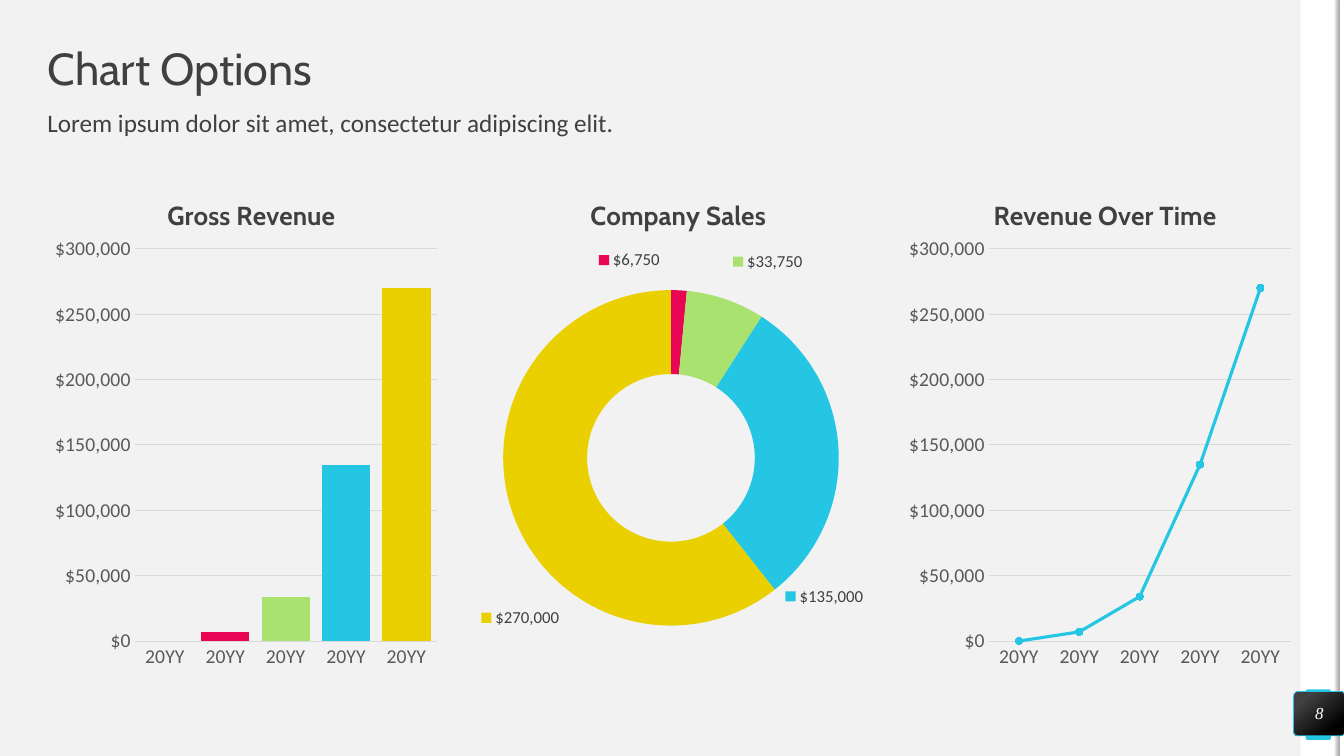
"""Build a slide that shows a column, a doughnut and a line chart side by side."""
import dataclasses
import typing

import lxml.etree
import pptx
import pptx.chart.chart
import pptx.chart.data
import pptx.dml.color
import pptx.enum.chart
import pptx.enum.shapes
import pptx.enum.text
import pptx.oxml.ns
import pptx.slide
import pptx.text.text
import pptx.util

RGB = pptx.dml.color.RGBColor
KIND = pptx.enum.chart.XL_CHART_TYPE
SHAPE = pptx.enum.shapes.MSO_SHAPE
ALIGN = pptx.enum.text.PP_ALIGN
ANCHOR = pptx.enum.text.MSO_ANCHOR

PAPER = RGB(0xF2, 0xF2, 0xF2)
WHITE = RGB(0xFF, 0xFF, 0xFF)
BLACK = RGB(0x00, 0x00, 0x00)
SHADE = RGB(0xA6, 0xA6, 0xA6)
INK = RGB(0x40, 0x40, 0x40)
AXIS_INK = RGB(0x59, 0x59, 0x59)
RULE = RGB(0xD9, 0xD9, 0xD9)
BLUE = RGB(0x25, 0xC6, 0xE3)
GREEN = RGB(0xA9, 0xE2, 0x6F)
RED = RGB(0xE8, 0x05, 0x54)
YELLOW = RGB(0xEA, 0xD0, 0x00)
POINT_COLOURS = (GREEN, RED, GREEN, BLUE, YELLOW)

COLUMNS, ROWS = 1333, 750
CELL = pptx.util.Inches(0.01)
LEFT_MARGIN, CHART_PITCH = 47, 423.5
DOLLARS = "[$$-409]#,##0"
YEARS = ("20YY",) * 5
YEARLY = (0, 7000, 34000, 135000, 270000)
AXIS_PLOT = (0.22, 0.16, 0.76, 0.76)
LABEL_SHIFTS = {1: (-0.12, -0.14), 2: (0.14, -0.15), 3: (0.07, 0.28), 4: (-0.08, 0.23)}


@dataclasses.dataclass(frozen=True)
class Box:
    """A rectangle in grid columns and rows."""
    left: float
    top: float
    width: float
    height: float

    def lengths(self) -> tuple[int, ...]:
        """Return the rectangle as slide lengths."""
        return tuple(round(cells * CELL) for cells in dataclasses.astuple(self))


@dataclasses.dataclass(frozen=True)
class Gradient:
    """Two stops, each a position and a colour, and a direction."""
    stops: tuple[tuple[float, RGB], ...]
    angle: float


@dataclasses.dataclass(frozen=True)
class Ornament:
    """A decorative shape on the right edge."""
    box: Box
    fill: RGB | Gradient
    rotation: float = 0
    corner: float | None = None
    outline: RGB | None = None


@dataclasses.dataclass(frozen=True)
class Panel:
    """One chart with its title and plot area as shares of the chart."""
    title: str
    title_left: float
    kind: KIND
    categories: tuple[str, ...]
    values: tuple[int, ...]
    plot_area: tuple[float, ...]
    finish: typing.Callable[[pptx.chart.chart.Chart], None]


def style_font(font: pptx.text.text.Font, name: str, size: float, colour: RGB) -> None:
    """Set the typeface, size and colour of a font."""
    font.name, font.size = name, pptx.util.Pt(size)
    font.color.rgb = colour


def write(frame: pptx.text.text.TextFrame, text: str, name: str, size: float,
          colour: RGB = INK, align: ALIGN = ALIGN.LEFT, anchor: ANCHOR = ANCHOR.MIDDLE) -> None:
    """Fill a frame without margins with one styled paragraph."""
    frame.text = text
    frame.word_wrap = True
    frame.auto_size = pptx.enum.text.MSO_AUTO_SIZE.NONE
    frame.vertical_anchor = anchor
    frame.margin_left = frame.margin_right = frame.margin_top = frame.margin_bottom = 0
    para = frame.paragraphs[0]
    para.alignment, para.line_spacing = align, 0.9
    style_font(para.runs[0].font, name, size, colour)


def draw_ornament(page: pptx.slide.Slide, ornament: Ornament):
    """Draw one decorative shape and return it."""
    kind = SHAPE.RECTANGLE if ornament.corner is None else SHAPE.ROUNDED_RECTANGLE
    shape = page.shapes.add_shape(kind, *ornament.box.lengths())
    shape.shadow.inherit = False
    shape.rotation = ornament.rotation
    if ornament.corner is not None:
        shape.adjustments[0] = ornament.corner
    if isinstance(ornament.fill, Gradient):
        shape.fill.gradient()
        shape.fill.gradient_angle = ornament.fill.angle
        for stop, (position, colour) in zip(shape.fill.gradient_stops, ornament.fill.stops):
            stop.position, stop.color.rgb = position, colour
    else:
        shape.fill.solid()
        shape.fill.fore_color.rgb = ornament.fill
    if ornament.outline is None:
        shape.line.fill.background()
    else:
        shape.line.color.rgb = ornament.outline
        shape.line.width = pptx.util.Pt(0.5)
    return shape


def set_layout(parent, index: int, shares: tuple[float, ...], modes: tuple[str, ...] = ()) -> None:
    """Give a chart part a manual layout with x, y and optionally w, h."""
    tag = pptx.oxml.ns.qn
    for old in parent.findall(tag("c:layout")):
        parent.remove(old)
    layout = lxml.etree.Element(tag("c:layout"))
    manual = lxml.etree.SubElement(layout, tag("c:manualLayout"))
    if len(shares) == 4:
        lxml.etree.SubElement(manual, tag("c:layoutTarget")).set("val", "inner")
    for mode in modes:
        lxml.etree.SubElement(manual, tag(f"c:{mode}")).set("val", "edge")
    for name, share in zip("xywh", shares):
        lxml.etree.SubElement(manual, tag(f"c:{name}")).set("val", str(share))
    parent.insert(index, layout)


def colour_points(series, indexes: typing.Iterable[int]) -> None:
    """Fill the chosen points with their colours."""
    for index in indexes:
        fill = series.points[index].format.fill
        fill.solid()
        fill.fore_color.rgb = POINT_COLOURS[index]


def finish_axes(chart: pptx.chart.chart.Chart) -> None:
    """Format the year and dollar axes."""
    for axis in (chart.category_axis, chart.value_axis):
        axis.major_tick_mark = axis.minor_tick_mark = pptx.enum.chart.XL_TICK_MARK.NONE
        style_font(axis.tick_labels.font, "Calibri", 14, AXIS_INK)
    dollars = chart.value_axis
    dollars.minimum_scale, dollars.maximum_scale, dollars.major_unit = 0, 300000, 50000
    dollars.tick_labels.number_format = DOLLARS
    dollars.tick_labels.number_format_is_linked = False
    dollars.format.line.fill.background()
    for line in (chart.category_axis.format.line, dollars.major_gridlines.format.line):
        line.color.rgb, line.width = RULE, pptx.util.Pt(0.75)


def finish_columns(chart: pptx.chart.chart.Chart) -> None:
    """Format the column chart."""
    finish_axes(chart)
    chart.plots[0].gap_width = 25
    series = chart.plots[0].series[0]
    series.format.fill.solid()
    series.format.fill.fore_color.rgb = GREEN
    colour_points(series, (1, 3, 4))


def finish_line(chart: pptx.chart.chart.Chart) -> None:
    """Format the line chart."""
    finish_axes(chart)
    series = chart.plots[0].series[0]
    series.smooth = False
    series.format.line.color.rgb, series.format.line.width = BLUE, pptx.util.Pt(2.25)
    series.marker.style, series.marker.size = pptx.enum.chart.XL_MARKER_STYLE.CIRCLE, 5
    series.marker.format.fill.solid()
    series.marker.format.fill.fore_color.rgb = BLUE
    series.marker.format.line.color.rgb = BLUE


def finish_doughnut(chart: pptx.chart.chart.Chart) -> None:
    """Format the doughnut and place its keyed labels around the ring."""
    tag = pptx.oxml.ns.qn
    series = chart.plots[0].series[0]
    colour_points(series, range(len(POINT_COLOURS)))
    for hole in chart._chartSpace.iter(tag("c:holeSize")):
        hole.set("val", "84")
    labels = series.data_labels
    labels.show_value = True
    labels.number_format, labels.number_format_is_linked = DOLLARS, False
    style_font(labels.font, "Calibri", 12, INK)
    for index in range(len(POINT_COLOURS)):
        style_font(series.points[index].data_label.font, "Calibri", 12, INK)
    for label in labels._element.findall(tag("c:dLbl")):
        index = int(label.find(tag("c:idx")).get("val"))
        shown = "1" if index in LABEL_SHIFTS else "0"
        for flag in ("c:showLegendKey", "c:showVal"):
            label.find(tag(flag)).set("val", shown)
        if index in LABEL_SHIFTS:
            set_layout(label, 1, LABEL_SHIFTS[index])
            number = lxml.etree.Element(tag("c:numFmt"), formatCode=DOLLARS, sourceLinked="0")
            label.insert(2, number)
    for flag in chart._chartSpace.iter(tag("c:showLeaderLines")):
        flag.set("val", "0")


def draw_panel(page: pptx.slide.Slide, panel: Panel, box: Box) -> None:
    """Draw one titled chart."""
    data = pptx.chart.data.CategoryChartData(number_format=DOLLARS)
    data.categories = panel.categories
    data.add_series("Series 1", panel.values)
    chart = page.shapes.add_chart(panel.kind, *box.lengths(), data).chart
    style_font(chart.font, "Calibri", 10, BLACK)
    chart.has_legend = False
    chart.has_title = True
    chart.chart_title.text_frame.text = panel.title
    font = chart.chart_title.text_frame.paragraphs[0].runs[0].font
    style_font(font, "Cabin", 18.6, INK)
    font.bold = True
    modes = ("xMode", "yMode")
    set_layout(chart.chart_title._element, 1, (panel.title_left, 0.05), modes)
    set_layout(chart._chartSpace.chart.plotArea, 0, panel.plot_area, modes)
    chart.plots[0].vary_by_categories = panel.kind == KIND.DOUGHNUT
    panel.finish(chart)


ORNAMENTS = (
    Ornament(Box(1290, 0, 39, ROWS), WHITE),
    Ornament(Box(1295, 684, 25, 50), BLUE, corner=0.07),
    Ornament(Box(956, 373, ROWS, 5), WHITE, rotation=90),
    Ornament(Box(951, 373, ROWS, 5), Gradient(((0, PAPER), (1, SHADE)), 90), rotation=90),
)
BADGE = Ornament(Box(1283, 686, 51, 44), Gradient(((0.2, INK), (0.82, BLACK)), 310),
                 corner=0.1, outline=BLUE)
PANELS = (
    Panel("Gross Revenue", 0.29, KIND.COLUMN_CLUSTERED, YEARS, YEARLY, AXIS_PLOT, finish_columns),
    Panel("Company Sales", 0.28, KIND.DOUGHNUT, tuple("12345"), (0, 6750, 33750, 135000, 270000),
          (0.07, 0.24, 0.85, 0.65), finish_doughnut),
    Panel("Revenue Over Time", 0.22, KIND.LINE_MARKERS_STACKED, YEARS, YEARLY, AXIS_PLOT,
          finish_line),
)


def main() -> None:
    """Build and save the deck."""
    deck = pptx.Presentation()
    deck.slide_width, deck.slide_height = COLUMNS * CELL, ROWS * CELL
    page = deck.slides.add_slide(deck.slide_layouts[5])
    page.background.fill.solid()
    page.background.fill.fore_color.rgb = PAPER
    for ornament in ORNAMENTS:
        draw_ornament(page, ornament)
    title = page.shapes.title
    title.left, title.top, title.width, title.height = Box(LEFT_MARGIN, 47, 1240, 47).lengths()
    write(title.text_frame, "Chart Options", "Cabin", 32)
    subtitle = page.shapes.add_textbox(*Box(LEFT_MARGIN, 110, 1240, 39).lengths())
    write(subtitle.text_frame, "Lorem ipsum dolor sit amet, consectetur adipiscing elit.",
          "Calibri", 18, anchor=ANCHOR.TOP)
    badge = draw_ornament(page, BADGE)
    write(badge.text_frame, "8", "Times New Roman", 12, WHITE, ALIGN.CENTER)
    badge.text_frame.paragraphs[0].runs[0].font.italic = True
    for position, panel in enumerate(PANELS):
        draw_panel(page, panel, Box(LEFT_MARGIN + position * CHART_PITCH, 165, 394, 512))
    deck.save("out.pptx")


if __name__ == "__main__":
    main()
